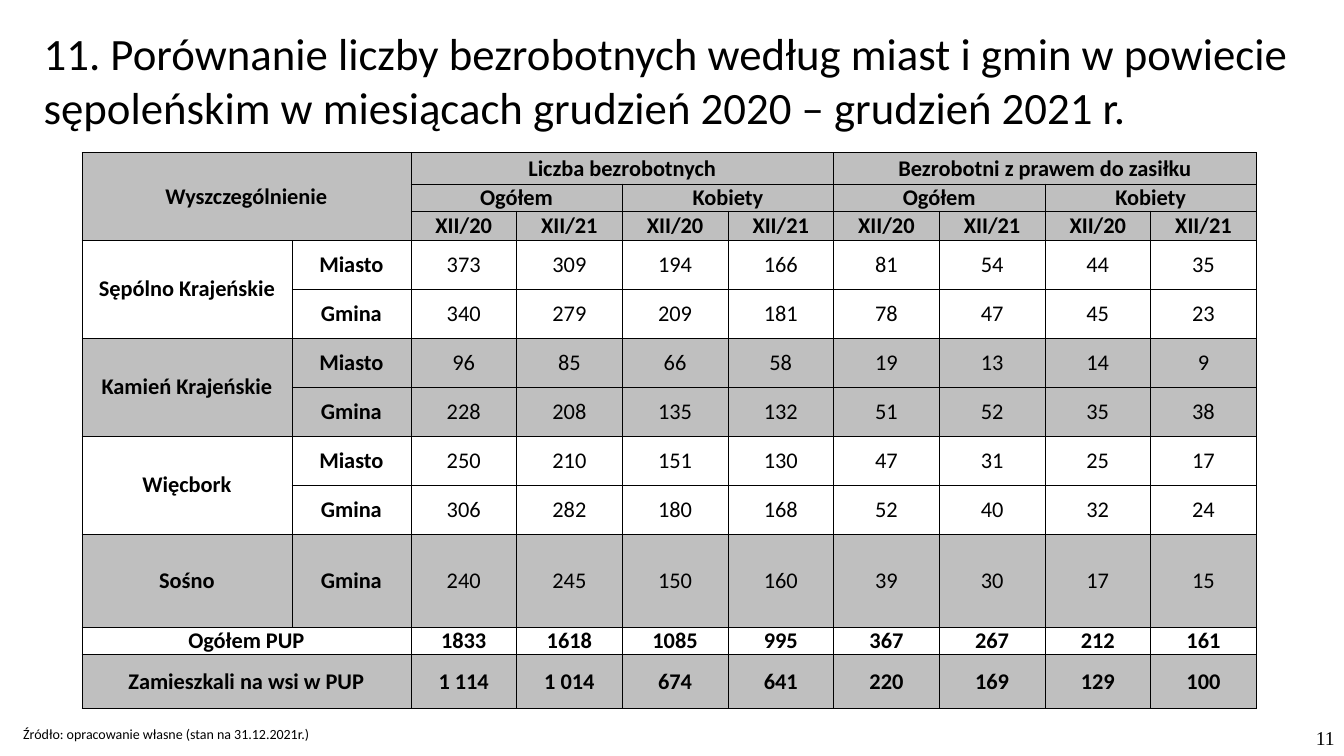
from pptx import Presentation
from pptx.dml.color import RGBColor
from pptx.enum.text import MSO_ANCHOR, MSO_AUTO_SIZE, PP_ALIGN
from pptx.oxml import parse_xml
from pptx.oxml.ns import nsdecls
from pptx.util import Pt

LEFT, CENTER, RIGHT = PP_ALIGN.LEFT, PP_ALIGN.CENTER, PP_ALIGN.RIGHT
TOP, MIDDLE = MSO_ANCHOR.TOP, MSO_ANCHOR.MIDDLE
FIXED = MSO_AUTO_SIZE.NONE
TITLE_ONLY = 5

BLACK, WHITE, GREY = "000000", "FFFFFF", "BFBFBF"
SANS, SERIF = "Calibri", "Times New Roman"

COLS = [150, 85] + [75.5] * 8
HEIGHTS = [22.5, 17.5, 21] + [35] * 6 + [66.5, 17.5, 39]
HEAD = 3
SHADED = {0, 1, 2, 5, 6, 9, 11}
TOTALS = {10, 11}
ROWS = [
    ["Wyszczególnienie", "", "Liczba bezrobotnych", "", "", "",
     "Bezrobotni z prawem do zasiłku", "", "", ""],
    ["", ""] + ["Ogółem", "", "Kobiety", ""] * 2,
    ["", ""] + ["XII/20", "XII/21"] * 4,
    ["Sępólno Krajeńskie", "Miasto", 373, 309, 194, 166, 81, 54, 44, 35],
    ["", "Gmina", 340, 279, 209, 181, 78, 47, 45, 23],
    ["Kamień Krajeńskie", "Miasto", 96, 85, 66, 58, 19, 13, 14, 9],
    ["", "Gmina", 228, 208, 135, 132, 51, 52, 35, 38],
    ["Więcbork", "Miasto", 250, 210, 151, 130, 47, 31, 25, 17],
    ["", "Gmina", 306, 282, 180, 168, 52, 40, 32, 24],
    ["Sośno", "Gmina", 240, 245, 150, 160, 39, 30, 17, 15],
    ["Ogółem PUP", "", 1833, 1618, 1085, 995, 367, 267, 212, 161],
    ["Zamieszkali na wsi w PUP", "", "1 114", "1 014", 674, 641, 220, 169, 129, 100],
]
# First row, first column, last row, last column
MERGES = (
    [(0, 0, 2, 1), (0, 2, 0, 5), (0, 6, 0, 9)]
    + [(1, col, 1, col + 1) for col in range(2, 10, 2)]
    + [(row, 0, row + 1, 0) for row in (3, 5, 7)]
    + [(row, 0, row, 1) for row in sorted(TOTALS)]
)


def color(code):
    return RGBColor.from_string(code)


def write(frame, text, size, font=SANS, align=LEFT, bold=False):
    frame.text = text
    para = frame.paragraphs[0]
    para.alignment = align
    para.font.size = Pt(size)
    para.font.name = font
    para.font.bold = bold
    para.font.color.rgb = color(BLACK)


def add_title(slide, x, y, w, h):
    title = slide.shapes.title
    title.left, title.top, title.width, title.height = Pt(x), Pt(y), Pt(w), Pt(h)
    frame = title.text_frame
    write(frame, "11. Porównanie liczby bezrobotnych według miast i gmin w powiecie "
                 "sępoleńskim w miesiącach grudzień 2020 – grudzień 2021 r.", 32)
    frame.word_wrap = True
    frame.auto_size = FIXED
    frame.vertical_anchor = TOP


def add_note(slide, text, x, y, w, h, wrap=True, **style):
    frame = slide.shapes.add_textbox(Pt(x), Pt(y), Pt(w), Pt(h)).text_frame
    frame.word_wrap = wrap
    write(frame, text, **style)


def add_border(cell, width=0.5):
    props = cell._tc.get_or_add_tcPr()
    for side in "LRTB":
        props.append(parse_xml(
            f'<a:ln{side} {nsdecls("a")} w="{int(Pt(width))}"><a:solidFill>'
            f'<a:srgbClr val="{BLACK}"/></a:solidFill></a:ln{side}>'))


def style_cell(cell, text, bold, fill):
    write(cell.text_frame, text, 16, align=CENTER, bold=bold)
    cell.vertical_anchor = MIDDLE
    cell.margin_left = cell.margin_right = cell.margin_top = cell.margin_bottom = 0
    add_border(cell)
    cell.fill.solid()
    cell.fill.fore_color.rgb = color(fill)


def add_counts(slide, x, y):
    """Place the table of unemployment counts with its top left corner at x, y."""
    table = slide.shapes.add_table(len(ROWS), len(COLS), Pt(x), Pt(y),
                                   Pt(sum(COLS)), Pt(sum(HEIGHTS))).table
    table.first_row = table.horz_banding = False
    for col, width in zip(table.columns, COLS):
        col.width = Pt(width)
    for i, values in enumerate(ROWS):
        table.rows[i].height = Pt(HEIGHTS[i])
        for j, value in enumerate(values):
            bold = i < HEAD or j < 2 or i in TOTALS
            style_cell(table.cell(i, j), str(value), bold,
                       GREY if i in SHADED else WHITE)
    for top, left, bottom, right in MERGES:
        table.cell(top, left).merge(table.cell(bottom, right))


def main():
    deck = Presentation()
    deck.slide_width, deck.slide_height = Pt(960), Pt(540)
    slide = deck.slides.add_slide(deck.slide_layouts[TITLE_ONLY])
    add_title(slide, 24, 15, 907, 85)
    add_note(slide, "Źródło: opracowanie własne (stan na 31.12.2021r.)",
             9.5, 515, 222.5, 29, wrap=False, size=10)
    add_counts(slide, 58.5, 109)
    add_note(slide, "11", 736.5, 515, 224, 37, size=14, font=SERIF, align=RIGHT)
    deck.save("out.pptx")


if __name__ == "__main__":
    main()
